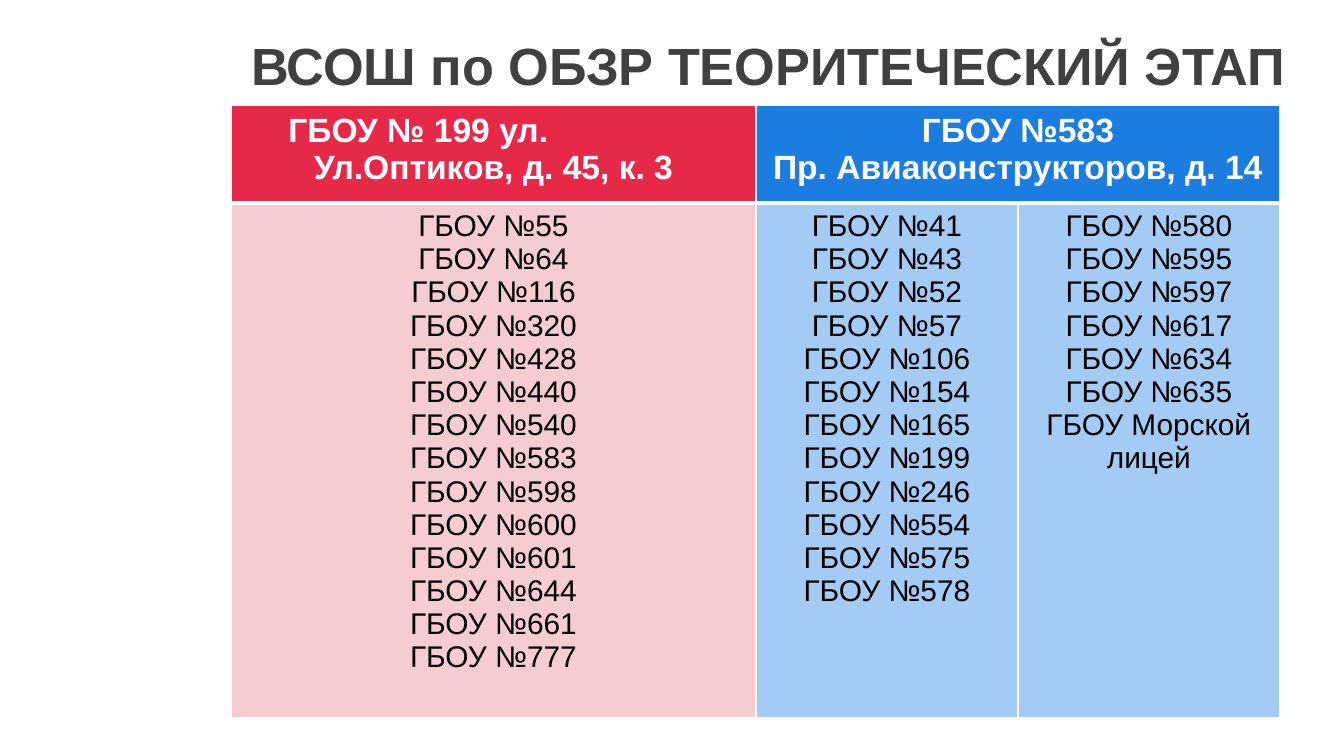
"""Build a slide listing the schools assigned to each olympiad venue."""
import pptx
import pptx.util
import pptx.dml.color
import pptx.enum.text
import pptx.oxml
import pptx.oxml.ns

SCALE = 6804
FONT = "Arial"
COLORS = {
    "title": "404040", "white": "FFFFFF", "black": "000000",
    "red": "E62949", "blue": "1C7DE1", "pink": "F5CDD0", "sky": "A4CBF4",
}
COLS = [525, 262, 262]
ROWS = [98, 502]
LEFT = [55, 64, 116, 320, 428, 440, 540, 583, 598, 600, 601, 644, 661, 777]
MID = [41, 43, 52, 57, 106, 154, 165, 199, 246, 554, 575, 578]
RIGHT = [580, 595, 597, 617, 634, 635]


def px(num):
    """Turn pixels into EMU."""
    return pptx.util.Emu(num * SCALE)


def color(name):
    """Look up a colour by name."""
    return pptx.dml.color.RGBColor.from_string(COLORS[name])


def write(frame, lines, size, ink, bold, align):
    """Fill a text frame with evenly styled lines."""
    frame.text = "\n".join(lines)
    for para in frame.paragraphs:
        para.alignment = align
        for run in para.runs:
            run.font.name = FONT
            run.font.size = pptx.util.Pt(size)
            run.font.bold = bold
            run.font.color.rgb = color(ink)


def edge(cell, widths):
    """Draw white borders, given widths in points by side."""
    props = cell._tc.get_or_add_tcPr()
    for spot, side in enumerate("LRTB"):
        line = pptx.oxml.parse_xml(
            f'<a:ln{side} {pptx.oxml.ns.nsdecls("a")} w="{widths[side] * 12700}">'
            f'<a:solidFill><a:srgbClr val="{COLORS["white"]}"/></a:solidFill>'
            f'</a:ln{side}>')
        props.insert(spot, line)


def paint(cell, lines, fill, head):
    """Style one table cell as a heading or a list."""
    cell.fill.solid()
    cell.fill.fore_color.rgb = color(fill)
    size, ink = (18, "white") if head else (16, "black")
    write(cell.text_frame, lines, size, ink, head,
          pptx.enum.text.PP_ALIGN.CENTER)
    edge(cell, {"L": 1, "R": 1, "T": 1 if head else 3, "B": 3 if head else 1})


def schools(nums):
    """Name schools by their numbers."""
    return [f"ГБОУ №{num}" for num in nums]


def title(slide):
    """Add the heading."""
    box = slide.shapes.add_textbox(px(238), px(0), px(1106), px(130))
    frame = box.text_frame
    frame.word_wrap = True
    frame.vertical_anchor = pptx.enum.text.MSO_ANCHOR.MIDDLE
    write(frame, ["ВСОШ по ОБЗР ТЕОРИТЕЧЕСКИЙ ЭТАП"], 28, "title", True,
          pptx.enum.text.PP_ALIGN.LEFT)


def grid(slide):
    """Add the table of venues and schools."""
    table = slide.shapes.add_table(
        2, 3, px(231), px(105), px(sum(COLS)), px(sum(ROWS))).table
    for col, width in zip(table.columns, COLS):
        col.width = px(width)
    for row, height in zip(table.rows, ROWS):
        row.height = px(height)
    table.cell(0, 1).merge(table.cell(0, 2))
    heads = [
        (["ГБОУ № 199 ул.", "Ул.Оптиков, д. 45, к. 3"], "red"),
        (["ГБОУ №583", "Пр. Авиаконструкторов, д. 14"], "blue"),
        ([], "blue"),
    ]
    lists = [
        (schools(LEFT), "pink"),
        (schools(MID), "sky"),
        (schools(RIGHT) + ["ГБОУ Морской", "лицей"], "sky"),
    ]
    for row, cells in enumerate([heads, lists]):
        for col, (lines, fill) in enumerate(cells):
            paint(table.cell(row, col), lines, fill, row == 0)
    first = table.cell(0, 0).text_frame.paragraphs[0]
    first.alignment = pptx.enum.text.PP_ALIGN.LEFT
    first._p.get_or_add_pPr().set("marL", str(px(44)))


def main():
    """Build and save the deck."""
    deck = pptx.Presentation()
    deck.slide_width, deck.slide_height = px(1344), px(756)
    slide = deck.slides.add_slide(deck.slide_layouts[6])
    title(slide)
    grid(slide)
    deck.save("out.pptx")


if __name__ == "__main__":
    main()
